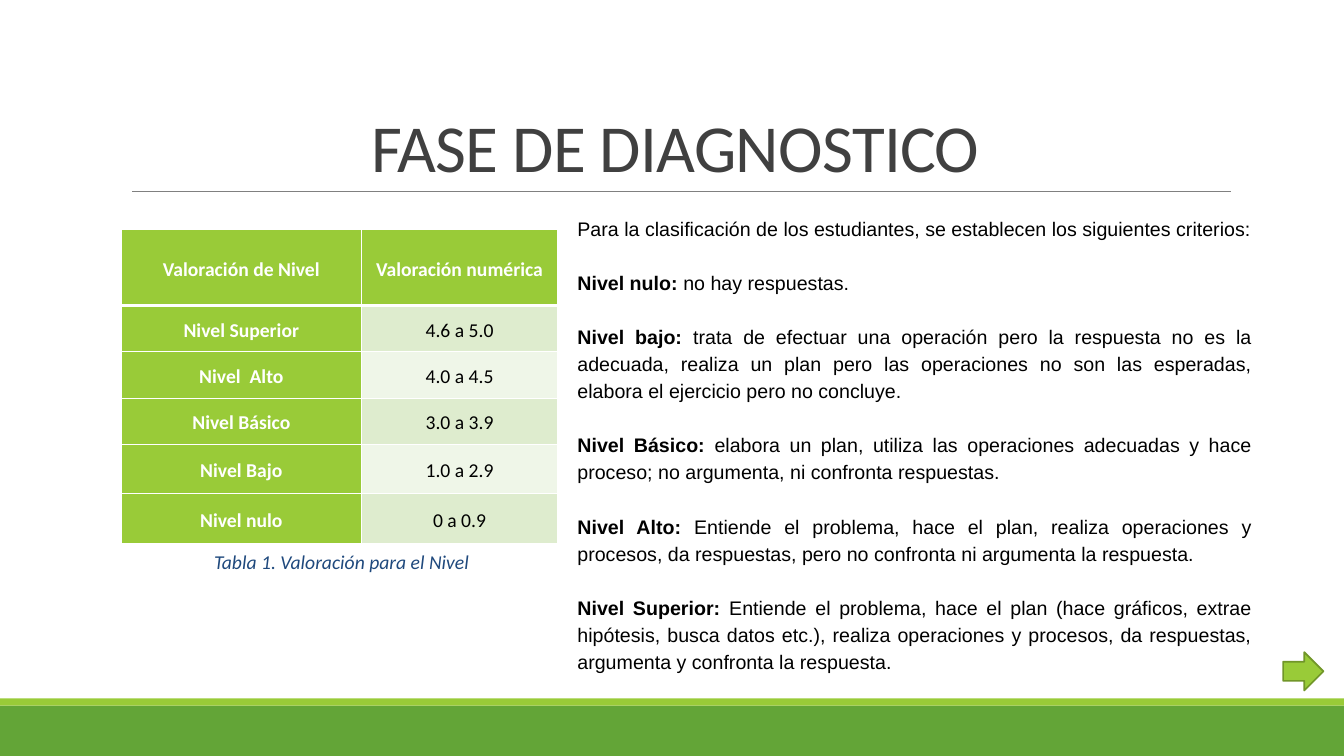
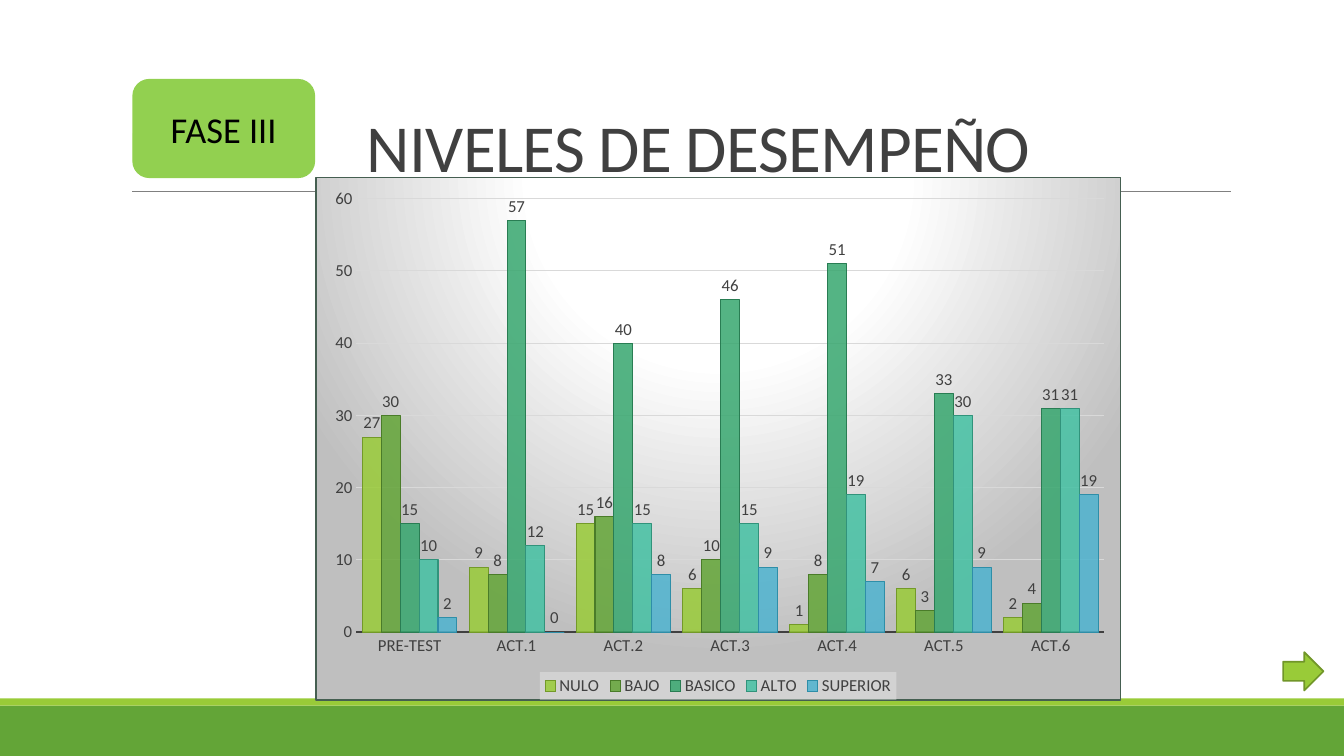
from dataclasses import dataclass

from pptx import Presentation
from pptx.chart.data import CategoryChartData
from pptx.dml.color import RGBColor
from pptx.enum import chart as charts, shapes, text
from pptx.oxml import parse_xml
from pptx.oxml.ns import nsdecls, qn
from pptx.util import Emu, Pt

# The slide is a grid of 80 columns by 45 rows of square cells
COLUMNS, ROWS, CELL = 80, 45, 152400
ALIGN, ANCHOR = text.PP_ALIGN, text.MSO_ANCHOR
SHAPE = shapes.MSO_SHAPE


@dataclass(frozen=True)
class Theme:
    heading_font: str = "Calibri"
    body_font: str = "Arial"
    title_size: int = 48
    badge_size: int = 26
    body_size: int = 14
    chart_size: int = 12
    ink: str = "404040"
    black: str = "000000"
    white: str = "FFFFFF"
    rule: str = "808080"
    band: str = "63A537"
    lime: str = "99CB38"
    lime_edge: str = "719629"
    badge: str = "92D050"
    caption: str = "1F497D"
    stripes: tuple = ("DEECCE", "EFF6E8")
    grid: str = "D9D9D9"
    shade: str = "BFBFBF"
    legend: str = "F2F2F2"
    chart_edge: str = "455F51"
    series: tuple = (("99CB38", "739A28"), ("63A537", "4A7C29"),
                     ("37A76F", "297D53"), ("44C1A3", "31937B"),
                     ("4EB3CF", "2E8EA8"))


THEME = Theme()


def cells(*counts):
    return [Emu(round(count * CELL)) for count in counts]


def rgb(value):
    return RGBColor.from_string(value)


def set_font(font, size, color, name=THEME.heading_font, bold=None, italic=None):
    font.size, font.name, font.bold, font.italic = Pt(size), name, bold, italic
    font.color.rgb = rgb(color)


def set_line(line, color, width):
    line.color.rgb = rgb(color)
    line.width = Pt(width)


def write(frame, paragraphs, size, color, font=THEME.heading_font, bold=None,
          italic=None, align=None, anchor=ANCHOR.TOP, wrap=True, leading=None,
          before=0, after=0, tracking=None):
    """Fill a frame; a paragraph given as a pair has a bold lead-in."""
    frame.word_wrap, frame.vertical_anchor = wrap, anchor
    if isinstance(paragraphs, str):
        paragraphs = [paragraphs]
    for index, content in enumerate(paragraphs):
        para = frame.add_paragraph() if index else frame.paragraphs[0]
        para.alignment, para.line_spacing = align, leading
        para.space_before = Pt(before if index else 0)
        para.space_after = Pt(after)
        if isinstance(content, str):
            spans = [(content, bold)]
        else:
            spans = [(content[0], True), (content[1], False)]
        for words, weight in spans:
            span = para.add_run()
            span.text = words
            set_font(span.font, size, color, font, weight, italic)
            if tracking:
                span.font._element.set("spc", str(tracking))


def set_borders(cell, color, **widths):
    """Draw cell edges, in points, by side: L, R, T, B."""
    properties = cell._tc.get_or_add_tcPr()
    for index, (side, width) in enumerate(widths.items()):
        properties.insert(index, parse_xml(
            f'<a:ln{side} {nsdecls("a")} w="{Pt(width)}"><a:solidFill>'
            f'<a:srgbClr val="{color}"/></a:solidFill></a:ln{side}>'))


class Deck:
    def __init__(self, theme):
        self.theme = theme
        self.deck = Presentation()
        self.deck.slide_width, self.deck.slide_height = cells(COLUMNS, ROWS)
        self.page = None

    def new_page(self):
        """Start a slide with the bands, the title rule and the arrow."""
        theme = self.theme
        self.page = self.deck.slides.add_slide(self.deck.slide_layouts[6])
        self.shape(SHAPE.RECTANGLE, (0, 42, COLUMNS, 3), theme.band)
        self.shape(SHAPE.RECTANGLE, (0, 41.58, COLUMNS, 0.42), theme.lime)
        self.rule(7.86, 73.26, 11.4)
        self.shape(SHAPE.RIGHT_ARROW, (76.38, 38.82, 2.4, 2.28), theme.lime,
                   theme.lime_edge, 1.25)

    def shape(self, kind, place, fill, edge=None, width=1):
        box = self.page.shapes.add_shape(kind, *cells(*place))
        box.shadow.inherit = False
        box.fill.solid()
        box.fill.fore_color.rgb = rgb(fill)
        if edge:
            set_line(box.line, edge, width)
        else:
            box.line.fill.background()
        return box

    def rule(self, left, right, row):
        line = self.page.shapes.add_connector(
            shapes.MSO_CONNECTOR.STRAIGHT, *cells(left, row, right, row))
        set_line(line.line, self.theme.rule, 0.5)
        line._element.spPr.append(parse_xml(f'<a:effectLst {nsdecls("a")}/>'))

    def text_box(self, place, paragraphs, size, color, **style):
        box = self.page.shapes.add_textbox(*cells(*place))
        write(box.text_frame, paragraphs, size, color, **style)

    def title(self, words, left, width, align):
        self.text_box((left, 1.86, width, 9.54), words, self.theme.title_size,
                      self.theme.ink, align=align, anchor=ANCHOR.BOTTOM,
                      leading=0.85, tracking=-50)

    def badge(self, place, words):
        box = self.shape(SHAPE.ROUNDED_RECTANGLE, place, self.theme.badge,
                         self.theme.badge)
        write(box.text_frame, words, self.theme.badge_size, self.theme.black,
              align=ALIGN.CENTER, anchor=ANCHOR.MIDDLE)

    def table(self, left, top, widths, heights, rows):
        theme = self.theme
        table = self.page.shapes.add_table(
            len(rows), len(widths),
            *cells(left, top, sum(widths), sum(heights))).table
        for column, width in zip(table.columns, cells(*widths)):
            column.width = width
        for row, height in zip(table.rows, cells(*heights)):
            row.height = height
        for r, row in enumerate(rows):
            for c, words in enumerate(row):
                cell = table.cell(r, c)
                heading = r == 0 or c == 0
                cell.margin_left = cell.margin_right = cells(0.42)[0]
                cell.margin_top = cell.margin_bottom = 0
                cell.vertical_anchor = ANCHOR.MIDDLE
                write(cell.text_frame, words, theme.body_size,
                      theme.white if heading else theme.black, bold=heading,
                      align=ALIGN.CENTER, anchor=ANCHOR.MIDDLE, leading=1.15,
                      after=4)
                cell.fill.solid()
                cell.fill.fore_color.rgb = rgb(
                    theme.lime if heading else theme.stripes[(r - 1) % 2])
                set_borders(cell, theme.white, L=1, R=1,
                            T=3 if r == 1 else 1, B=3 if r == 0 else 1)

    def column_chart(self, place, categories, series):
        theme = self.theme
        data = CategoryChartData()
        data.categories = categories
        for name, values in series.items():
            data.add_series(name, values)
        chart = self.page.shapes.add_chart(
            charts.XL_CHART_TYPE.COLUMN_CLUSTERED, *cells(*place), data).chart
        chart.has_title = False
        set_font(chart.font, theme.chart_size, theme.ink)

        # Columns and their values
        plot = chart.plots[0]
        plot.gap_width, plot.overlap, plot.vary_by_categories = 65, 0, False
        plot.has_data_labels = True
        labels = plot.data_labels
        labels.show_value = True
        labels.position = charts.XL_LABEL_POSITION.OUTSIDE_END
        set_font(labels.font, theme.chart_size, theme.ink)
        for bars, (fill, edge) in zip(plot.series, theme.series):
            bars.format.fill.solid()
            bars.format.fill.fore_color.rgb = rgb(fill)
            color = next(bars._element.iter(qn("a:srgbClr")))
            color.append(parse_xml(f'<a:alpha {nsdecls("a")} val="85000"/>'))
            set_line(bars.format.line, edge, 0.75)

        # Axes
        for axis in (chart.category_axis, chart.value_axis):
            axis.major_tick_mark = charts.XL_TICK_MARK.NONE
            axis.minor_tick_mark = charts.XL_TICK_MARK.NONE
            set_font(axis.tick_labels.font, theme.chart_size, theme.ink)
        set_line(chart.category_axis.format.line, theme.ink, 1.5)
        scale = chart.value_axis
        scale.minimum_scale, scale.maximum_scale, scale.major_unit = 0, 60, 10
        scale.format.line.fill.background()
        set_line(scale.major_gridlines.format.line, theme.grid, 0.75)

        # Legend on a translucent panel
        chart.has_legend = True
        legend = chart.legend
        legend.position = charts.XL_LEGEND_POSITION.BOTTOM
        legend.include_in_layout = False
        set_font(legend.font, theme.chart_size, theme.ink)
        legend._element.find(qn("c:txPr")).addprevious(parse_xml(
            f'<c:spPr {nsdecls("c", "a")}><a:solidFill>'
            f'<a:srgbClr val="{theme.legend}"><a:alpha val="39000"/></a:srgbClr>'
            '</a:solidFill></c:spPr>'))

        # Plot position and radial background
        area = chart._chartSpace.chart.plotArea
        for layout in area.findall(qn("c:layout")):
            area.remove(layout)
        shares = "".join(f'<c:{key} val="{share}"/>' for key, share in
                         dict(x=0.05, y=0.04, w=0.93, h=0.83).items())
        area.insert(0, parse_xml(
            f'<c:layout {nsdecls("c")}><c:manualLayout>'
            '<c:layoutTarget val="inner"/><c:xMode val="edge"/>'
            f'<c:yMode val="edge"/>{shares}</c:manualLayout></c:layout>'))
        stops = "".join(
            f'<a:gs pos="{at * 1000}"><a:srgbClr val="{color}"/></a:gs>'
            for at, color in ((0, theme.white), (39, theme.white),
                              (100, theme.shade)))
        chart._chartSpace.chart.addnext(parse_xml(
            f'<c:spPr {nsdecls("c", "a")}><a:gradFill><a:gsLst>{stops}</a:gsLst>'
            '<a:path path="circle"><a:fillToRect l="50000" t="-80000" '
            f'r="50000" b="180000"/></a:path></a:gradFill><a:ln w="{Pt(0.75)}">'
            f'<a:solidFill><a:srgbClr val="{theme.chart_edge}"/></a:solidFill>'
            '</a:ln></c:spPr>'))


def diagnosis_page(deck):
    theme = deck.theme
    deck.new_page()
    deck.title("FASE DE DIAGNOSTICO", 7.2, 66, ALIGN.CENTER)
    deck.table(7.2, 13.68, (14.34, 11.64), (4.5, 2.76, 2.76, 2.76, 2.94, 2.94), [
        ("Valoración de Nivel", "Valoración numérica"),
        ("Nivel Superior", "4.6 a 5.0"),
        ("Nivel  Alto", "4.0 a 4.5"),
        ("Nivel Básico", "3.0 a 3.9"),
        ("Nivel Bajo", "1.0 a 2.9"),
        ("Nivel nulo", "0 a 0.9"),
    ])
    deck.text_box((12.06, 32.22, 16.56, 2.16), "Tabla 1. Valoración para el Nivel",
                  theme.body_size, theme.caption, italic=True, wrap=False,
                  align=ALIGN.CENTER, leading=1.15)
    deck.text_box((33.78, 12.42, 41.34, 28.26), [
        "Para la clasificación de los estudiantes, se establecen los siguientes "
        "criterios:",
        ("Nivel nulo: ", "no hay respuestas."),
        ("Nivel bajo: ", "trata de efectuar una operación pero la respuesta no es "
         "la adecuada, realiza un plan pero las operaciones no son las esperadas, "
         "elabora el ejercicio pero no concluye."),
        ("Nivel Básico: ", "elabora un plan, utiliza las operaciones adecuadas y "
         "hace proceso; no argumenta, ni confronta respuestas."),
        ("Nivel Alto: ", "Entiende el problema, hace el plan, realiza operaciones "
         "y procesos, da respuestas, pero no confronta ni argumenta la respuesta."),
        ("Nivel Superior: ", "Entiende el problema, hace el plan (hace gráficos, "
         "extrae hipótesis, busca datos etc.), realiza operaciones y procesos, da "
         "respuestas, argumenta y confronta la respuesta."),
    ], theme.body_size, theme.black, font=theme.body_font, align=ALIGN.JUSTIFY,
        leading=1.15, before=19.3)


def performance_page(deck):
    deck.new_page()
    deck.badge((7.92, 4.74, 10.8, 5.82), "FASE III")
    deck.column_chart(
        (18.78, 10.56, 47.94, 31.14),
        ["PRE-TEST"] + [f"ACT.{number}" for number in range(1, 7)],
        {"NULO": (27, 9, 15, 6, 1, 6, 2),
         "BAJO": (30, 8, 16, 10, 8, 3, 4),
         "BASICO": (15, 57, 40, 46, 51, 33, 31),
         "ALTO": (10, 12, 15, 15, 19, 30, 31),
         "SUPERIOR": (2, 0, 8, 9, 7, 9, 19)})
    deck.title("NIVELES DE DESEMPEÑO", 21.24, 51.96, ALIGN.LEFT)


def main():
    deck = Deck(THEME)
    diagnosis_page(deck)
    performance_page(deck)
    deck.deck.save("out.pptx")


if __name__ == "__main__":
    main()
